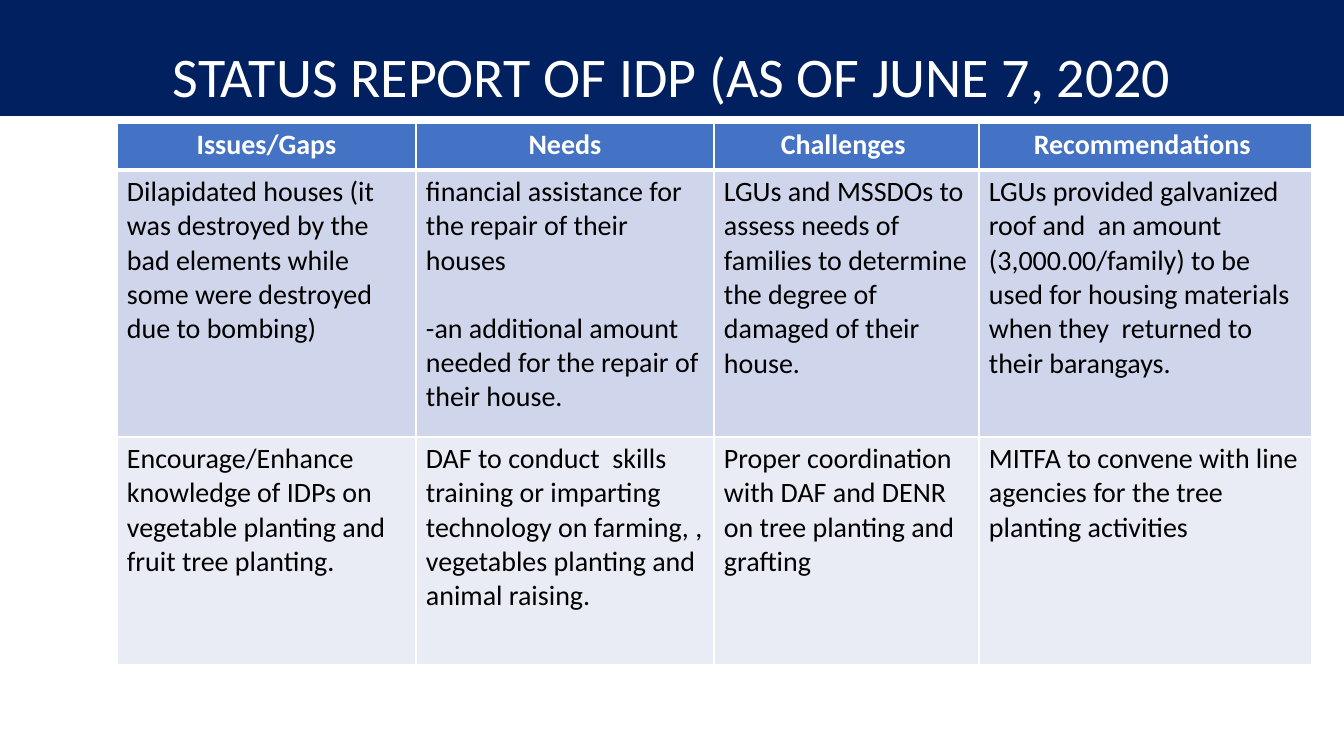
from lxml.etree import SubElement
from pptx import Presentation
from pptx.dml.color import RGBColor
from pptx.enum.text import MSO_ANCHOR, MSO_AUTO_SIZE, PP_ALIGN
from pptx.oxml.ns import qn
from pptx.util import Pt

PX = 6804  # EMU per px

NAVY = RGBColor(0x00, 0x20, 0x60)
BLUE = RGBColor(0x44, 0x72, 0xC4)
BAND_DARK = RGBColor(0xCF, 0xD5, 0xEA)
BAND_LIGHT = RGBColor(0xE9, 0xEB, 0xF5)
WHITE = RGBColor(0xFF, 0xFF, 0xFF)
BLACK = RGBColor(0x00, 0x00, 0x00)

COLUMN_WIDTHS = [299, 298, 265, 333]
ROW_HEIGHTS = [47, 267, 228]
ROW_FILLS = [BLUE, BAND_DARK, BAND_LIGHT]

# Each cell is a list of paragraphs.
ROWS = [
    [["Issues/Gaps"], ["Needs"], ["Challenges "], ["Recommendations "]],
    [
        ["Dilapidated houses (it was destroyed by the bad elements while some "
         "were destroyed due to bombing)"],
        ["financial assistance for the repair of their houses",
         "-an additional amount needed for the repair of their house."],
        ["LGUs and MSSDOs to assess needs of families to determine the degree "
         "of damaged of their house."],
        ["LGUs provided galvanized roof and  an amount (3,000.00/family) to be "
         "used for housing materials when they  returned to their barangays."],
    ],
    [
        ["Encourage/Enhance knowledge of IDPs on vegetable planting and fruit "
         "tree planting."],
        ["DAF to conduct  skills training or imparting technology on farming, , "
         "vegetables planting and animal raising."],
        ["Proper coordination with DAF and DENR on tree planting and  grafting"],
        ["MITFA to convene with line agencies for the tree planting activities"],
    ],
]


def add_span(para, text, size, color, bold=False):
    span = para.add_run()
    span.text = text
    span.font.name = "Calibri"
    span.font.size = Pt(size)
    span.font.bold = bold
    span.font.color.rgb = color


def set_borders(cell, bottom_width):
    """Give the cell white borders; they must precede the fill in the XML."""
    properties = cell._tc.get_or_add_tcPr()
    for side, width in [("L", 1), ("R", 1), ("T", 1), ("B", bottom_width)]:
        line = SubElement(properties, qn(f"a:ln{side}"), w=str(Pt(width)))
        fill = SubElement(line, qn("a:solidFill"))
        SubElement(fill, qn("a:srgbClr"), val=str(WHITE))


deck = Presentation()
deck.slide_width = 1344 * PX
deck.slide_height = 756 * PX
page = deck.slides.add_slide(deck.slide_layouts[5])

# Title band
title = page.shapes.title
title.left, title.top = 0, 0
title.width, title.height = 1344 * PX, 116 * PX
title.fill.solid()
title.fill.fore_color.rgb = NAVY
frame = title.text_frame
frame.word_wrap = True
frame.auto_size = MSO_AUTO_SIZE.NONE
frame.vertical_anchor = MSO_ANCHOR.BOTTOM
para = frame.paragraphs[0]
para.alignment = PP_ALIGN.CENTER
para.line_spacing = 0.9
add_span(para, "STATUS REPORT OF IDP (AS OF JUNE 7, 2020", 30, WHITE)

# Status table
table = page.shapes.add_table(
    len(ROWS), len(COLUMN_WIDTHS), 117 * PX, 123 * PX,
    sum(COLUMN_WIDTHS) * PX, sum(ROW_HEIGHTS) * PX).table
for column, width in zip(table.columns, COLUMN_WIDTHS):
    column.width = width * PX
for row, height in zip(table.rows, ROW_HEIGHTS):
    row.height = height * PX

for row_index, cells in enumerate(ROWS):
    is_header = row_index == 0
    for column_index, texts in enumerate(cells):
        cell = table.cell(row_index, column_index)
        set_borders(cell, 3 if is_header else 1)
        cell.fill.solid()
        cell.fill.fore_color.rgb = ROW_FILLS[row_index]
        cell.margin_left = cell.margin_right = 10 * PX
        cell.margin_top = cell.margin_bottom = 5 * PX
        for index, text in enumerate(texts):
            if index == 0:
                para = cell.text_frame.paragraphs[0]
            else:
                para = cell.text_frame.add_paragraph()
                para.space_before = Pt(18)
            para.alignment = PP_ALIGN.CENTER if is_header else PP_ALIGN.LEFT
            add_span(para, text, 15, WHITE if is_header else BLACK, is_header)

deck.save("out.pptx")
